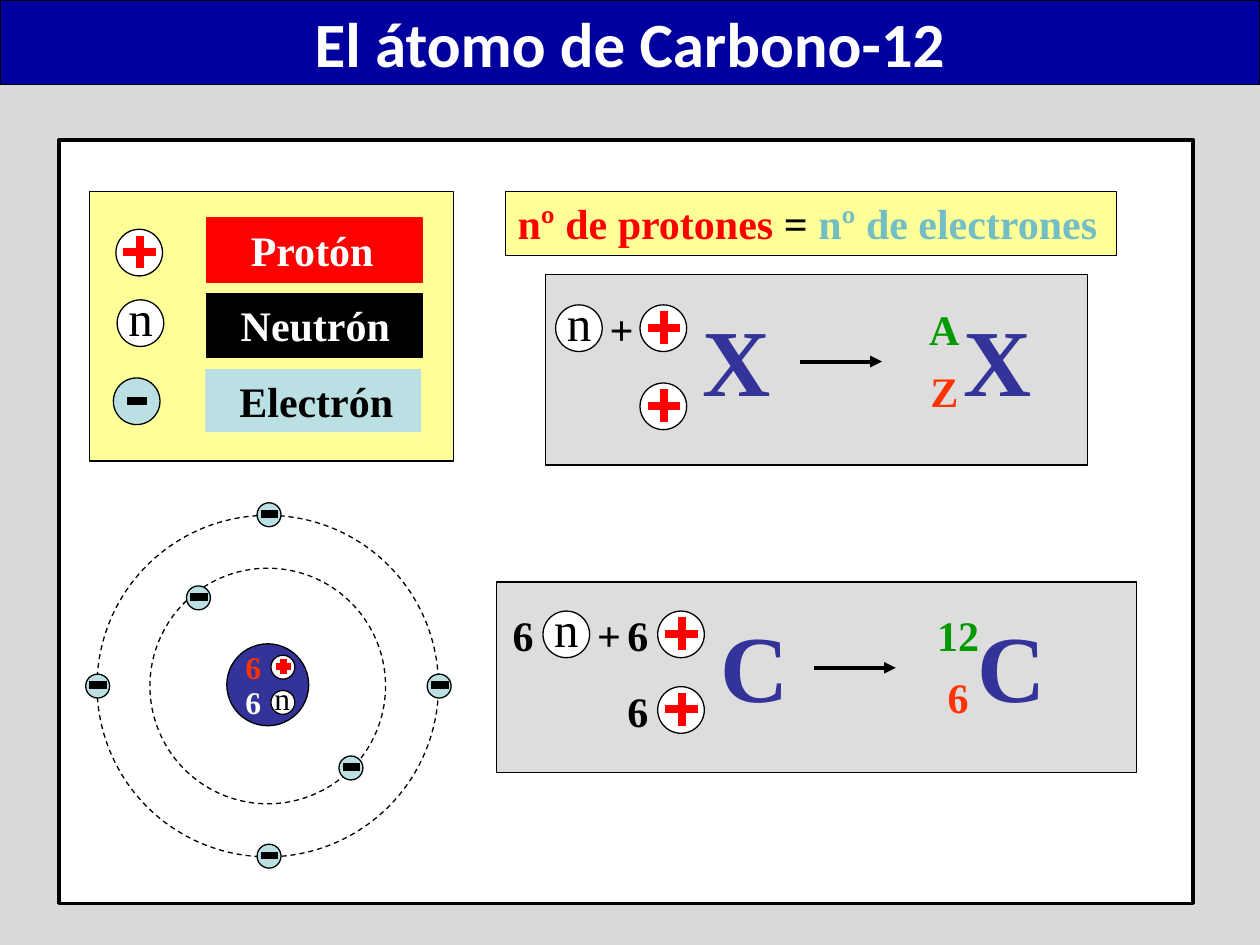
from dataclasses import dataclass
from typing import Optional

from lxml.etree import SubElement
from pptx import Presentation
from pptx.dml.color import RGBColor as Rgb
from pptx.enum.dml import MSO_LINE as Dash
from pptx.enum.shapes import MSO_CONNECTOR as Link, MSO_SHAPE as Kind
from pptx.enum.text import MSO_ANCHOR as Anchor, MSO_AUTO_SIZE as Fit, PP_ALIGN as Align
from pptx.oxml.ns import qn
from pptx.util import Pt

PX = 9144
SERIF = "Times New Roman"
BLACK = Rgb(0x00, 0x00, 0x00)
WHITE = Rgb(0xFF, 0xFF, 0xFF)
RED = Rgb(0xFF, 0x00, 0x00)
ORANGE = Rgb(0xFF, 0x33, 0x00)
GREEN = Rgb(0x00, 0x99, 0x00)
NAVY = Rgb(0x00, 0x00, 0x9E)
INDIGO = Rgb(0x33, 0x33, 0x99)
AQUA = Rgb(0xBB, 0xE0, 0xE3)
TEAL = Rgb(0x72, 0xBE, 0xC4)
YELLOW = Rgb(0xFF, 0xFF, 0x99)
GREY = Rgb(0xDD, 0xDD, 0xDD)
PAPER = Rgb(0xD9, 0xD9, 0xD9)


@dataclass
class Box:
    x: int
    y: int
    w: int
    h: int

    def emu(self) -> list[int]:
        return [v * PX for v in (self.x, self.y, self.w, self.h)]


@dataclass
class Label:
    name: str
    box: Box
    fill: Rgb
    ink: Rgb
    edge: Optional[Rgb]
    inset: int


@dataclass
class Formula:
    frame: Box
    symbol: str
    mass: str
    number: str
    count: str
    neutron: int
    proton: int
    drop: int
    arrow: int
    y: int


LABELS = [
    Label("Protón", Box(164, 173, 171, 51), RED, WHITE, RED, 35),
    Label("Neutrón", Box(164, 233, 171, 51), BLACK, WHITE, BLACK, 27),
    Label("Electrón", Box(163, 293, 171, 50), AQUA, BLACK, None, 27),
]
FORMULAS = [
    Formula(Box(433, 218, 430, 151), "X", "A", "Z", "", 441, 508, 62, 635, 242),
    Formula(Box(394, 462, 508, 151), "C", "12", "6", "6", 431, 522, 60, 646, 485),
]
ORBITS = [Box(119, 451, 187, 187), Box(77, 409, 271, 271)]
ELECTRONS = [(204, 399), (204, 670), (339, 535), (68, 535), (148, 465), (269, 600)]

deck = Presentation()
deck.slide_width, deck.slide_height = 1000 * PX, 750 * PX
slide = deck.slides.add_slide(deck.slide_layouts[6])
slide.background.fill.solid()
slide.background.fill.fore_color.rgb = PAPER


def draw(kind: Kind, box: Box, fill: Optional[Rgb] = None,
         edge: Optional[Rgb] = BLACK, width: float = 0.75, dash: bool = False):
    shape = slide.shapes.add_shape(kind, *box.emu())
    shape.shadow.inherit = False
    if fill is None:
        shape.fill.background()
    else:
        shape.fill.solid()
        shape.fill.fore_color.rgb = fill
    if edge is None:
        shape.line.fill.background()
    else:
        shape.line.color.rgb = edge
        shape.line.width = Pt(width)
        if dash:
            shape.line.dash_style = Dash.DASH
    return shape


def text(place, *parts: tuple[str, Rgb], size: int = 24, font: str = SERIF,
         bold: bool = True, align: Align = Align.LEFT, anchor: Anchor = Anchor.TOP,
         wrap: bool = True, grow: bool = True, inset: int = 10) -> None:
    if isinstance(place, Box):
        place = slide.shapes.add_textbox(*place.emu())
    frame = place.text_frame
    frame.word_wrap = wrap
    frame.auto_size = Fit.SHAPE_TO_FIT_TEXT if grow else Fit.NONE
    frame.vertical_anchor = anchor
    frame.margin_left = inset * PX
    para = frame.paragraphs[0]
    para.alignment = align
    for words, ink in parts:
        run = para.add_run()
        run.text = words
        run.font.name = font
        run.font.size = Pt(size)
        run.font.bold = bold
        run.font.color.rgb = ink


def line(x1: int, y1: int, x2: int, y2: int, ink: Rgb = BLACK,
         width: float = 4.5, arrow: bool = False) -> None:
    link = slide.shapes.add_connector(Link.STRAIGHT, x1 * PX, y1 * PX, x2 * PX, y2 * PX)
    link.line.color.rgb = ink
    link.line.width = Pt(width)
    if arrow:
        SubElement(link.line._get_or_add_ln(), qn("a:tailEnd"), type="triangle")
    SubElement(link._element.spPr, qn("a:effectLst"))


def ball(x: int, y: int, size: int, fill: Rgb) -> tuple[int, int]:
    draw(Kind.OVAL, Box(x, y, size, size), fill)
    return x + (size + 1) // 2, y + size // 2


def proton(x: int, y: int, size: int = 37) -> None:
    cx, cy = ball(x, y, size, WHITE)
    arm = size * 9 // 25
    line(cx - arm, cy, cx + arm, cy, RED)
    line(cx, cy + arm, cx, cy - arm, RED)


def neutron(x: int, y: int, small: bool = False) -> None:
    ball(x, y, 19 if small else 37, WHITE)
    box = Box(x - 7, y - 14, 33, 40) if small else Box(x - 1, y - 15, 55, 57)
    text(box, ("n", BLACK), size=18 if small else 28, bold=False)


def electron(x: int, y: int, size: int = 19, arm: int = 7) -> None:
    cx, cy = ball(x, y, size, AQUA)
    line(cx - arm, cy, cx + arm, cy)


def legend() -> None:
    draw(Kind.RECTANGLE, Box(71, 152, 289, 214), YELLOW)
    proton(92, 182)
    neutron(93, 238)
    electron(90, 300, 37, 8)
    for item in LABELS:
        shape = draw(Kind.RECTANGLE, item.box, item.fill, item.edge)
        text(shape, (item.name, item.ink), inset=item.inset)


def atom() -> None:
    for orbit in ORBITS:
        draw(Kind.OVAL, orbit, dash=True)
    for x, y in ELECTRONS:
        electron(x, y)
    ball(180, 511, 65, INDIGO)
    proton(215, 520, 19)
    neutron(215, 548, True)
    for y, ink in ((509, ORANGE), (537, WHITE)):
        text(Box(185, y, 33, 40), ("6", ink), size=18)


def formula(f: Formula) -> None:
    draw(Kind.RECTANGLE, f.frame, GREY)
    low = f.y + f.drop
    neutron(f.neutron, f.y)
    text(Box(f.neutron + 33, f.y - 6, 36, 50), ("+", BLACK))
    proton(f.proton, f.y)
    proton(f.proton, low)
    if f.count:
        for x, y in ((f.neutron, f.y), (f.proton, f.y), (f.proton, low)):
            text(Box(x - 34, y - 6, 35, 50), (f.count, BLACK))
    line(f.arrow, f.y + 45, f.arrow + 65, f.y + 45, width=2.25, arrow=True)
    for x in (f.proton + 40, f.arrow + 120):
        text(Box(x, f.y - 7, 91, 100), (f.symbol, INDIGO), size=54)
    for words, ink, y in ((f.mass, GREEN, f.y - 6), (f.number, ORANGE, f.y + 43)):
        text(Box(f.arrow + 88, y, 53, 50), (words, ink), align=Align.CENTER, wrap=False)


draw(Kind.RECTANGLE, Box(47, 111, 900, 606), WHITE, width=2)
legend()
rule = draw(Kind.RECTANGLE, Box(401, 152, 485, 51), YELLOW)
text(rule, ("nº de protones", RED), (" = ", BLACK), ("nº de electrones", TEAL))
atom()
for item in FORMULAS:
    formula(item)
title = draw(Kind.RECTANGLE, Box(0, 0, 1000, 67), NAVY)
text(title, ("El átomo de Carbono-12", WHITE), size=36, font="Calibri",
     align=Align.CENTER, anchor=Anchor.MIDDLE, wrap=False, grow=False)
deck.save("out.pptx")
